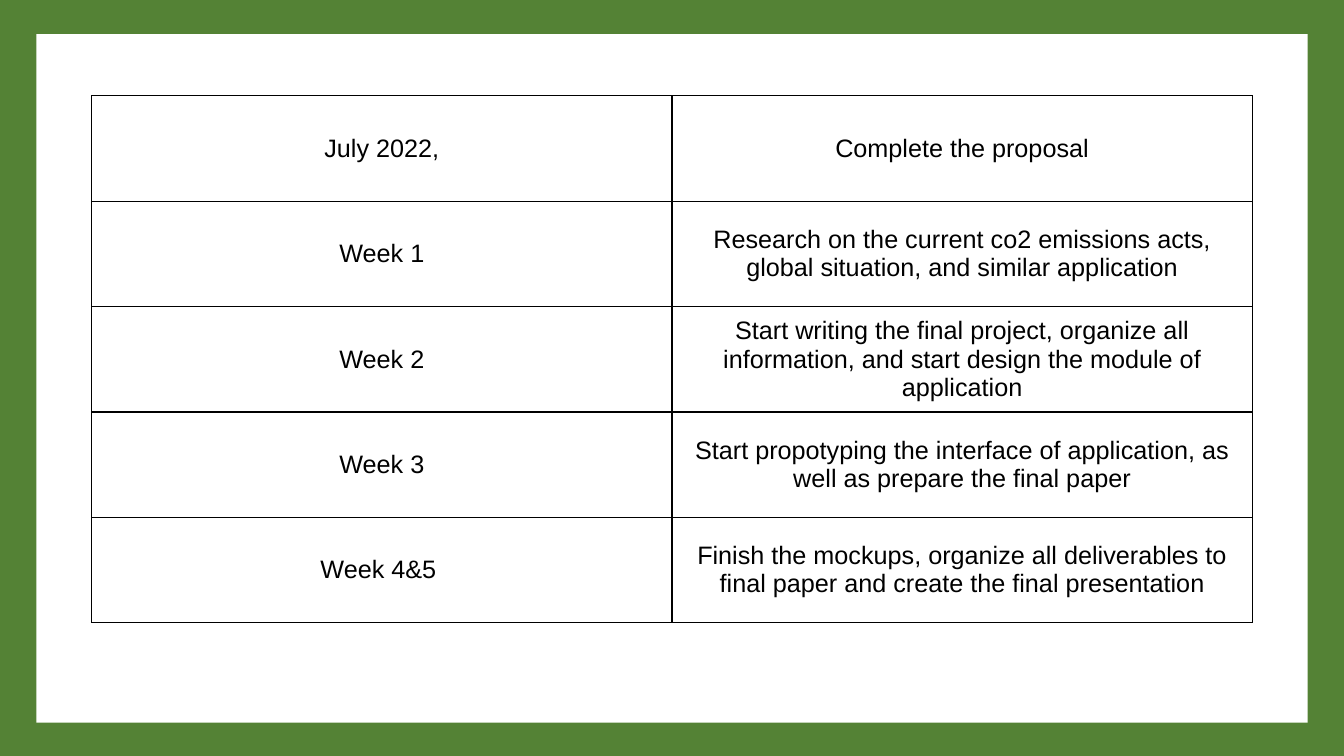
from lxml import etree
from pptx import Presentation
from pptx import util as u
from pptx.dml.color import RGBColor
from pptx.enum import shapes, text
from pptx.oxml.ns import qn

COLORS = {"frame": "548235", "panel": "FFFFFF", "ink": "000000"}
SCHEDULE = [
    ("July 2022,", "Complete the proposal"),
    ("Week 1", "Research on the current co2 emissions acts, global situation, and similar application"),
    ("Week 2", "Start writing the final project, organize all information, "
               "and start design the module of application"),
    ("Week 3", "Start propotyping the interface of application, as well as prepare the final paper"),
    ("Week 4&5 ", "Finish the mockups, organize all deliverables to final paper "
                  "and create the final presentation"),
]


class SlideBuilder:
    """Draws styled elements on one slide."""

    font = "Arial"
    size = 18
    border = 1

    def __init__(self, prs):
        self.s = prs.slides.add_slide(prs.slide_layouts[6])

    def color(self, name):
        return RGBColor.from_string(COLORS[name])

    def background(self, name):
        fill = self.s.background.fill
        fill.solid()
        fill.fore_color.rgb = self.color(name)

    def panel(self, x, y, w, h, name):
        sp = self.s.shapes.add_shape(
            shapes.MSO_SHAPE.RECTANGLE, *map(u.Inches, (x, y, w, h)))
        sp.shadow.inherit = False
        sp.fill.solid()
        sp.fill.fore_color.rgb = self.color(name)
        sp.line.fill.background()

    def cell_borders(self, cell):
        tc_pr = cell._tc.get_or_add_tcPr()
        for i, side in enumerate(("lnL", "lnR", "lnT", "lnB")):
            ln = etree.Element(qn(f"a:{side}"), w=str(u.Pt(self.border)))
            fill = etree.SubElement(ln, qn("a:solidFill"))
            etree.SubElement(fill, qn("a:srgbClr"), val=COLORS["ink"])
            tc_pr.insert(i, ln)

    def cell(self, cell, words):
        cell.fill.background()
        cell.vertical_anchor = text.MSO_ANCHOR.MIDDLE
        cell.text_frame.text = words
        p = cell.text_frame.paragraphs[0]
        p.alignment = text.PP_ALIGN.CENTER
        r = p.runs[0]
        r.font.name = self.font
        r.font.size = u.Pt(self.size)
        r.font.bold = False
        r.font.color.rgb = self.color("ink")
        self.cell_borders(cell)

    def table(self, x, y, w, h, rows):
        frame = self.s.shapes.add_table(
            len(rows), len(rows[0]), *map(u.Inches, (x, y, w, h)))
        table = frame.table
        table.first_row = table.horz_banding = False
        for i, row in enumerate(rows):
            for j, words in enumerate(row):
                self.cell(table.cell(i, j), words)


def main():
    prs = Presentation()
    prs.slide_width, prs.slide_height = u.Inches(13.33), u.Inches(7.5)
    slide = SlideBuilder(prs)
    slide.background("frame")
    slide.panel(0.36, 0.34, 12.61, 6.83, "panel")
    slide.table(0.91, 0.95, 11.51, 5.23, SCHEDULE)
    prs.save("out.pptx")


if __name__ == "__main__":
    main()
